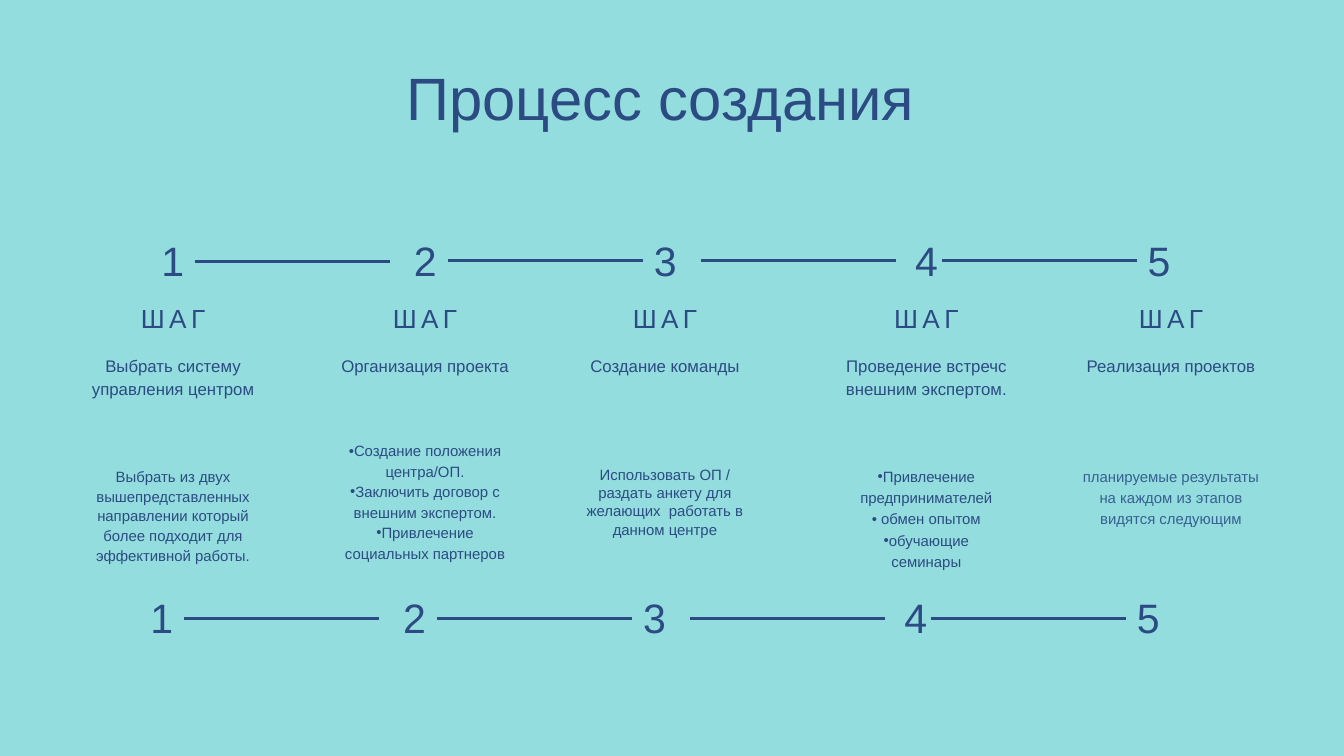
"""Build a five-step process slide with numbered timelines above and below."""
import pptx
import pptx.dml.color
import pptx.enum.shapes
import pptx.enum.text
import pptx.oxml
import pptx.oxml.ns
import pptx.util
from lxml import etree

Inches = pptx.util.Inches
Pt = pptx.util.Pt
NAVY = pptx.dml.color.RGBColor(0x2B, 0x4B, 0x82)
BLUE = pptx.dml.color.RGBColor(0x37, 0x60, 0x92)
AQUA = pptx.dml.color.RGBColor(0x94, 0xDD, 0xDE)


def fill_text(box, position, lines, size, spacing, color=NAVY, tracking=0, bullets=0):
    """Place a box and write centred lines, the first few of them bulleted."""
    box.left, box.top, box.width, box.height = [Inches(value) for value in position]
    frame = box.text_frame
    frame.word_wrap = True
    frame.auto_size = pptx.enum.text.MSO_AUTO_SIZE.NONE
    frame.vertical_anchor = pptx.enum.text.MSO_ANCHOR.TOP
    frame.margin_left = frame.margin_right = frame.margin_top = frame.margin_bottom = 0
    for index, line in enumerate(lines):
        para = frame.paragraphs[0] if index == 0 else frame.add_paragraph()
        span = para.add_run()
        span.text = line
        para.alignment = pptx.enum.text.PP_ALIGN.CENTER
        para.line_spacing = Pt(spacing)
        para.space_before = Pt(0)
        if bullets:
            properties = para._p.get_or_add_pPr()
            properties.set("marL", "0")
            properties.set("indent", "0")
            if index < bullets:
                font = etree.SubElement(properties, pptx.oxml.ns.qn("a:buFont"))
                font.set("typeface", "Arial")
                mark = etree.SubElement(properties, pptx.oxml.ns.qn("a:buChar"))
                mark.set("char", "•")
            else:
                etree.SubElement(properties, pptx.oxml.ns.qn("a:buNone"))
        if tracking:
            span._r.get_or_add_rPr().set("spc", str(tracking))
        para.font.name = "Arial"
        para.font.size = Pt(size)
        para.font.color.rgb = color


deck = pptx.Presentation()
deck.slide_width = Inches(20)
deck.slide_height = Inches(11.25)
page = deck.slides.add_slide(deck.slide_layouts.get_by_name("Two Content"))
page.background.fill.solid()
page.background.fill.fore_color.rgb = AQUA
title, *list_boxes = list(page.placeholders)[:3]
fill_text(title, (1, 0.91, 17.65, 1.08), ["Процесс создания"], 64, 76.8)

steps = [
    (1.23, 2.69, "Выбрать систему управления центром", 24.4, 6.93, 1.77, 21.1, NAVY, 0,
     ["Выбрать из двух вышепредставленных направлении который более подходит "
      "для эффективной работы."]),
    (5.01, 2.63, "Организация проекта", 24.4, 6.54, 1.85, 21.9, NAVY, 3,
     ["Создание положения центра/ОП.", "Заключить договор с внешним экспертом.",
      "Привлечение социальных партнеров"]),
    (8.55, 2.69, "Создание команды", 24.4, 6.93, 1.07, 19.4, NAVY, 0,
     ["Использовать ОП / раздать анкету для желающих  работать в данном центре"]),
    (12.32, 2.93, "Проведение встречс внешним экспертом.", 24.4, 6.91, 2.26, 22.7, NAVY, 3,
     ["Привлечение предпринимателей", " обмен опытом", "обучающие", "семинары"]),
    (16.08, 2.69, "Реализация проектов", 23.6, 6.91, 1.29, 22.7, BLUE, 0,
     ["планируемые результаты на каждом из этапов видятся следующим"]),
]
for left, width, heading, heading_spacing, top, height, spacing, color, bullets, lines in steps:
    label = page.shapes.add_textbox(0, 0, 0, 0)
    fill_text(label, (left, 4.42, width, 0.58), ["ШАГ"], 28, 39.2, tracking=480)
    heading_box = page.shapes.add_textbox(0, 0, 0, 0)
    fill_text(heading_box, (left, 5.26, width, 0.67), [heading], 18, heading_spacing)
    detail = list_boxes.pop(0) if bullets else page.shapes.add_textbox(0, 0, 0, 0)
    fill_text(detail, (left, top, width, height), lines, 16, spacing, color, bullets=bullets)

number_lefts = [2.24, 6, 9.57, 13.46, 16.92]
line_starts = [(2.9, 0.51), (6.67, 0.5), (10.43, 0.5), (14.02, 0.5)]
for shift, top in [(0, 3.38), (-0.16, 8.7)]:
    for number, left in enumerate(number_lefts, 1):
        box = page.shapes.add_textbox(0, 0, 0, 0)
        fill_text(box, (left + shift, top, 0.66, 0.91), [str(number)], 44, 61.6, tracking=750)
    for start, drop in line_starts:
        x, y = start + shift, top + drop
        line = page.shapes.add_connector(
            pptx.enum.shapes.MSO_CONNECTOR.STRAIGHT,
            Inches(x), Inches(y), Inches(x + 2.9), Inches(y))
        line.line.color.rgb = NAVY
        line.line.width = Pt(3)
        etree.SubElement(line._element.spPr, pptx.oxml.ns.qn("a:effectLst"))

deck.save("out.pptx")
